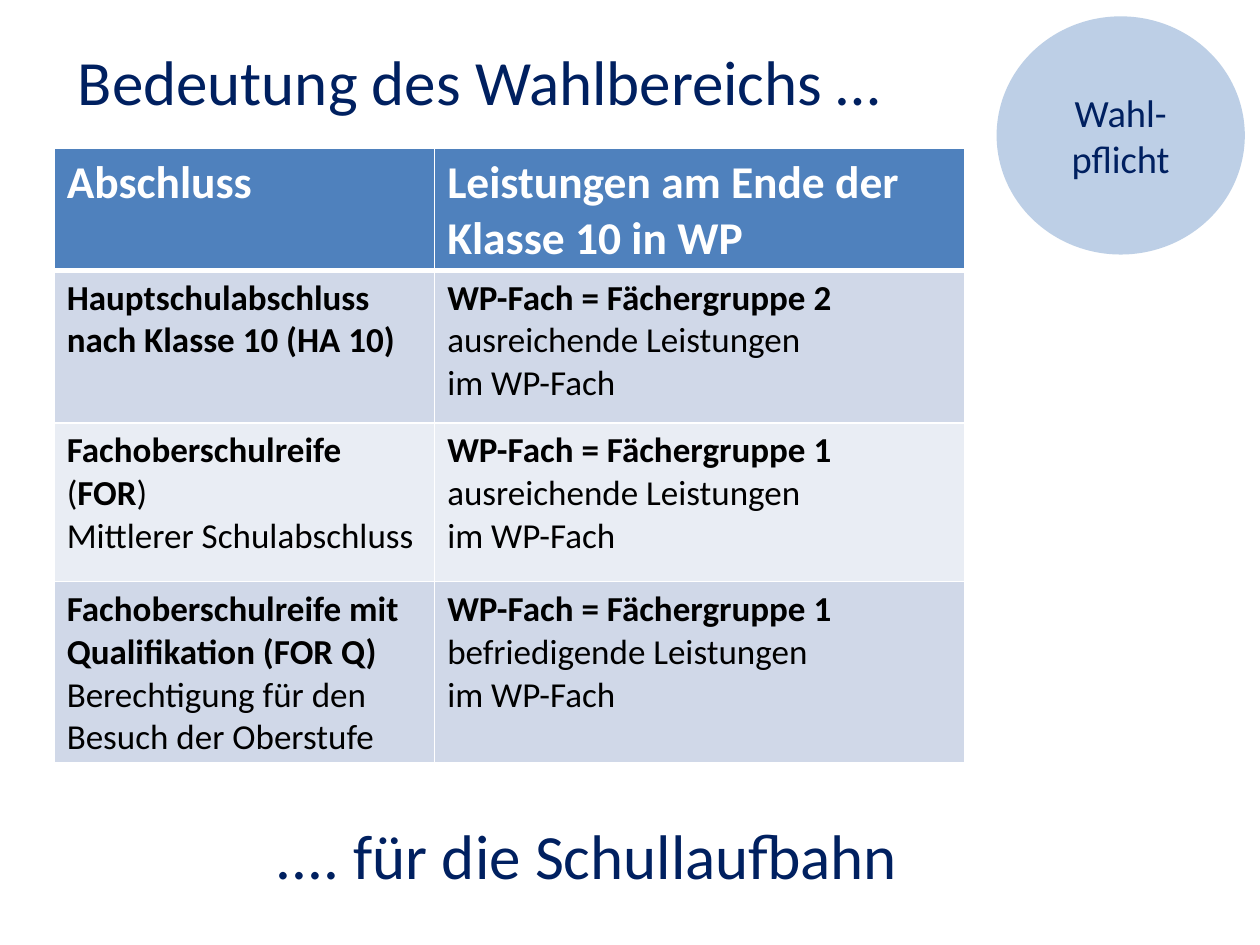
import pptx
import pptx.dml.color
import pptx.enum.shapes
import pptx.enum.text
import pptx.oxml
import pptx.oxml.ns
import pptx.util
from lxml import etree

Inches = pptx.util.Inches
Pt = pptx.util.Pt
qn = pptx.oxml.ns.qn


def color(value):
    return pptx.dml.color.RGBColor.from_string(value)


class SlideBuilder:
    font = "Calibri"
    navy = "002060"
    white = "FFFFFF"
    black = "000000"
    header_fill = "4F81BD"
    band_fills = ("D0D8E8", "E9EDF4")

    def __init__(self, slide):
        self.s = slide

    def format_run(self, r, size, value, bold=False):
        r.font.name = self.font
        r.font.size = Pt(size)
        r.font.bold = bold
        r.font.color.rgb = color(value)

    def heading(self, text, left, top, width, height):
        sp = self.s.shapes.add_textbox(Inches(left), Inches(top), Inches(width), Inches(height))
        tf = sp.text_frame
        tf.text = text
        tf.word_wrap = False
        tf.auto_size = pptx.enum.text.MSO_AUTO_SIZE.SHAPE_TO_FIT_TEXT
        self.format_run(tf.paragraphs[0].runs[0], 36, self.navy)

    def badge(self, text, left, top, width, height):
        kind = pptx.enum.shapes.MSO_SHAPE.FLOWCHART_CONNECTOR
        sp = self.s.shapes.add_shape(kind, Inches(left), Inches(top), Inches(width), Inches(height))
        sp.shadow.inherit = False
        sp.fill.solid()
        sp.fill.fore_color.rgb = color("95B3D7")
        rgb = sp._element.spPr.find(qn("a:solidFill")).find(qn("a:srgbClr"))
        etree.SubElement(rgb, qn("a:alpha"), val="62000")
        sp.line.fill.background()
        tf = sp.text_frame
        tf.text = text
        tf.word_wrap = True
        tf.vertical_anchor = pptx.enum.text.MSO_ANCHOR.MIDDLE
        p = tf.paragraphs[0]
        p.alignment = pptx.enum.text.PP_ALIGN.CENTER
        self.format_run(p.runs[0], 22, self.navy)

    def borders(self, cell, bottom):
        tc_pr = cell._tc.get_or_add_tcPr()
        widths = {"lnL": 1, "lnR": 1, "lnT": 1, "lnB": bottom}
        for i, (side, width) in enumerate(widths.items()):
            ln = etree.Element(qn("a:" + side), w=str(Pt(width)))
            fill = etree.SubElement(ln, qn("a:solidFill"))
            etree.SubElement(fill, qn("a:srgbClr"), val=self.white)
            tc_pr.insert(i, ln)

    def cell(self, cell, text, size, value, fill, bottom):
        cell.fill.solid()
        cell.fill.fore_color.rgb = color(fill)
        self.borders(cell, bottom)
        tf = cell.text_frame
        for i, line in enumerate(text.split("\n")):
            p = tf.add_paragraph() if i else tf.paragraphs[0]
            for j, part in enumerate(line.split("*")):
                if part:
                    r = p.add_run()
                    r.text = part
                    self.format_run(r, size, value, j % 2 == 1)

    def table(self, rows, left, top, widths, heights):
        frame = self.s.shapes.add_table(len(rows), len(widths), Inches(left), Inches(top),
                                        Inches(sum(widths)), Inches(sum(heights)))
        table = frame.table
        for column, width in zip(table.columns, widths):
            column.width = Inches(width)
        for i, (texts, height) in enumerate(zip(rows, heights)):
            table.rows[i].height = Inches(height)
            for j, text in enumerate(texts):
                if i == 0:
                    style = (26, self.white, self.header_fill, 3)
                else:
                    style = (20, self.black, self.band_fills[(i - 1) % 2], 1)
                self.cell(table.cell(i, j), text, *style)


def requirement(group, grade):
    return f"*WP-Fach = Fächergruppe {group}*\n{grade} Leistungen\nim WP-Fach"


def main():
    prs = pptx.Presentation()
    prs.slide_width = Inches(10)
    prs.slide_height = Inches(7.5)
    s = SlideBuilder(prs.slides.add_slide(prs.slide_layouts[6]))
    s.heading("Bedeutung des Wahlbereichs …", 0.52, 0.29, 6.63, 0.71)
    s.heading(".... für die Schullaufbahn", 2.09, 6.43, 5.18, 0.71)
    s.badge("Wahl-pflicht", 7.91, 0.13, 1.97, 1.89)
    rows = [
        ("*Abschluss*", "*Leistungen am Ende der Klasse 10 in WP*"),
        ("*Hauptschulabschluss nach Klasse 10 (HA 10)*", requirement(2, "ausreichende")),
        ("*Fachoberschulreife *(*FOR*)\nMittlerer Schulabschluss", requirement(1, "ausreichende")),
        ("*Fachoberschulreife mit Qualifikation (FOR Q)*\nBerechtigung für den Besuch der Oberstufe",
         requirement(1, "befriedigende")),
    ]
    s.table(rows, 0.43, 1.18, (3.02, 4.21), (0.96, 1.21, 1.26, 1.44))
    prs.save("out.pptx")


if __name__ == "__main__":
    main()
